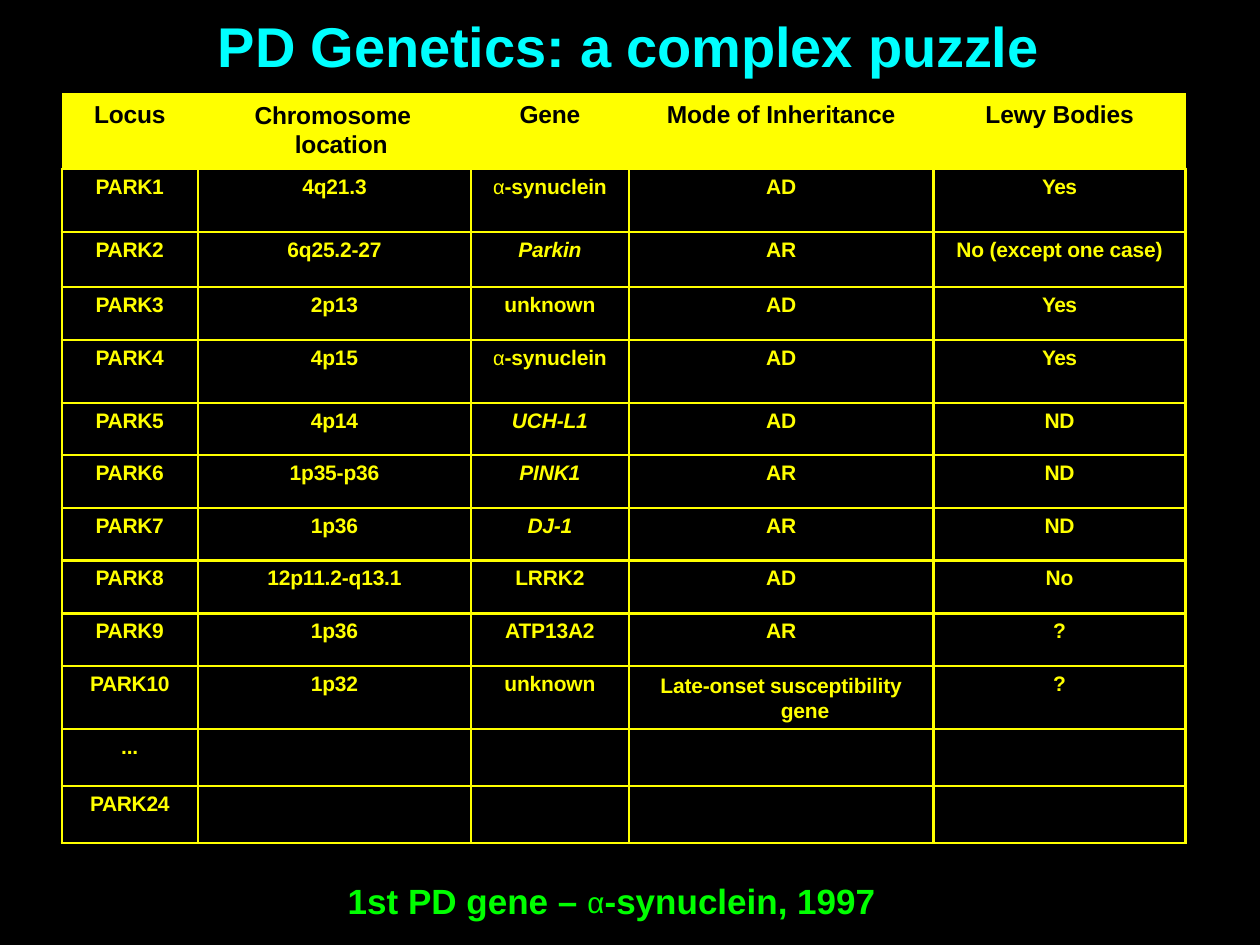
"""Build the slide on Parkinson's disease genetics with its locus table."""
from dataclasses import dataclass

from lxml.etree import SubElement
from pptx import Presentation
from pptx.dml.color import RGBColor
from pptx.enum.shapes import MSO_SHAPE as Shape
from pptx.enum.text import MSO_ANCHOR as Anchor, MSO_AUTO_SIZE as AutoSize, PP_ALIGN as Align
from pptx.oxml.ns import qn
from pptx.util import Inches, Pt

BLACK = RGBColor(0x00, 0x00, 0x00)
YELLOW = RGBColor(0xFF, 0xFF, 0x00)
CYAN = RGBColor(0x00, 0xFF, 0xFF)
GREEN = RGBColor(0x00, 0xFF, 0x00)
PLAIN_TABLE = "{2D5ABB26-0587-4C30-8999-92F81FD0307C}"


@dataclass(frozen=True)
class Style:
    size: float
    color: RGBColor
    italic: bool = False
    tracking: float = 0
    alpha_size: float = 11.5
    alpha_baseline: int = 0


@dataclass(frozen=True)
class Locus:
    name: str
    location: str = ""
    gene: str = ""
    inheritance: str = ""
    lewy_bodies: str = ""
    height: float = 0.42

    def texts(self) -> tuple:
        return self.name, self.location, self.gene, self.inheritance, self.lewy_bodies


HEADER = Locus("Locus", "Chromosome location", "Gene", "Mode of Inheritance", "Lewy Bodies", 0.6)
LOCI = [
    Locus("PARK1", "4q21.3", "α-synuclein", "AD", "Yes", 0.5),
    Locus("PARK2", "6q25.2-27", "Parkin", "AR", "No (except one case)", 0.44),
    Locus("PARK3", "2p13", "unknown", "AD", "Yes"),
    Locus("PARK4", "4p15", "α-synuclein", "AD", "Yes", 0.5),
    Locus("PARK5", "4p14", "UCH-L1", "AD", "ND", 0.41),
    Locus("PARK6", "1p35-p36", "PINK1", "AR", "ND"),
    Locus("PARK7", "1p36", "DJ-1", "AR", "ND"),
    Locus("PARK8", "12p11.2-q13.1", "LRRK2", "AD", "No"),
    Locus("PARK9", "1p36", "ATP13A2", "AR", "?"),
    Locus("PARK10", "1p32", "unknown", "Late-onset susceptibility\ngene", "?", 0.5),
    Locus("...", height=0.45),
    Locus("PARK24", height=0.45),
]
ITALIC_GENES = {"Parkin", "UCH-L1", "PINK1", "DJ-1"}
COLUMN_WIDTHS = (1.08, 2.17, 1.25, 2.42, 2)


def apply(target, **values) -> None:
    """Set each named attribute on the target."""
    for name, value in values.items():
        setattr(target, name, value)


def add_span(para, text: str, style: Style) -> None:
    """Add one run, with the Greek letter in a lighter cut."""
    span = para.add_run()
    span.text = text
    greek = text == "α"
    apply(span.font, name="Arial", size=Pt(style.alpha_size if greek else style.size),
          bold=not greek, italic=style.italic)
    span.font.color.rgb = style.color
    properties = span._r.get_or_add_rPr()
    if style.tracking and not greek:
        properties.set("spc", str(round(style.tracking * 100)))
    if style.alpha_baseline and greek:
        properties.set("baseline", str(style.alpha_baseline))


def write(para, text: str, style: Style, **layout) -> None:
    """Fill a paragraph, splitting the text around the Greek letter."""
    apply(para, **layout)
    for part in filter(None, text.partition("α")):
        add_span(para, part, style)


def set_indent(para, left: float, first: float = 0) -> None:
    """Set the left margin and first-line indent of a paragraph."""
    properties = para._p.get_or_add_pPr()
    properties.set("marL", str(Inches(left)))
    properties.set("indent", str(Inches(first)))


def write_line(shape, text: str, style: Style) -> None:
    """Write a single left-aligned line into a tight text frame."""
    frame = shape.text_frame
    apply(frame, margin_left=0, margin_right=0, margin_bottom=0, margin_top=Inches(0.01),
          word_wrap=True, vertical_anchor=Anchor.TOP, auto_size=AutoSize.SHAPE_TO_FIT_TEXT)
    para = frame.paragraphs[0]
    write(para, text, style, alignment=Align.LEFT, space_before=Pt(1))
    set_indent(para, 0.01)


def outline(cell) -> None:
    """Draw yellow borders on all four sides of a cell."""
    for side in ("lnL", "lnR", "lnT", "lnB"):
        line = SubElement(cell._tc.get_or_add_tcPr(), qn(f"a:{side}"), w=str(Pt(1.5)))
        SubElement(SubElement(line, qn("a:solidFill")), qn("a:srgbClr"), val=str(YELLOW))


def format_cell(cell, fill: RGBColor, top: float) -> None:
    """Fill a cell and set its margins."""
    apply(cell, margin_left=0, margin_right=0, margin_bottom=0, margin_top=Inches(top))
    cell.fill.solid()
    cell.fill.fore_color.rgb = fill


def fill_header(cell, text: str) -> None:
    """Write a column heading."""
    format_cell(cell, YELLOW, 0.06)
    para = cell.text_frame.paragraphs[0]
    style = Style(14, BLACK, tracking=-0.1)
    if text == HEADER.location:
        cell.margin_top = Inches(0.07)
        write(para, text, style, alignment=Align.LEFT, space_before=Pt(5.1), line_spacing=Pt(16.1))
        set_indent(para, 0.77, -0.32)
    else:
        write(para, text, style, alignment=Align.CENTER, space_before=Pt(4))


def fill_body(cell, text: str) -> None:
    """Write a value of a locus, one paragraph for each line."""
    outline(cell)
    format_cell(cell, BLACK, 0.05)
    if not text:
        return
    tracking = {"Yes": -0.3, "?": 0}.get(text, -0.2 if text.startswith("PARK") else -0.1)
    style = Style(12, YELLOW, text in ITALIC_GENES, tracking)
    first, *others = text.split("\n")
    layout = dict(alignment=Align.CENTER, line_spacing=Pt(14.3) if others else None)
    frame = cell.text_frame
    write(frame.paragraphs[0], first, style, space_before=Pt(3.5), **layout)
    for other in others:
        para = frame.add_paragraph()
        write(para, other, style, **layout)
        set_indent(para, 0.38)


def add_locus_table(page) -> None:
    """Add the table of loci."""
    rows = [HEADER, *LOCI]
    table = page.shapes.add_table(
        len(rows), len(COLUMN_WIDTHS), Inches(0.49), Inches(0.74),
        Inches(sum(COLUMN_WIDTHS)), Inches(sum(row.height for row in rows))).table
    apply(table, first_row=False, horz_banding=False)
    for style_id in table._tbl.iter(qn("a:tableStyleId")):
        style_id.text = PLAIN_TABLE
    for column, width in zip(table.columns, COLUMN_WIDTHS):
        column.width = Inches(width)
    for row, locus in zip(table.rows, rows):
        row.height = Inches(locus.height)
        fill_cell = fill_header if locus is HEADER else fill_body
        for cell, text in zip(row.cells, locus.texts()):
            fill_cell(cell, text)


def main() -> None:
    """Assemble and save the deck."""
    deck = Presentation()
    apply(deck, slide_width=Inches(10), slide_height=Inches(7.5))
    page = deck.slides.add_slide(deck.slide_layouts[5])
    title = page.shapes.title
    backdrop = page.shapes.add_shape(Shape.RECTANGLE, 0, 0, deck.slide_width, deck.slide_height)
    backdrop.shadow.inherit = False
    backdrop.fill.solid()
    backdrop.fill.fore_color.rgb = BLACK
    backdrop.line.fill.background()
    title.element.addprevious(backdrop.element)
    apply(title, left=Inches(1.72), top=Inches(0.08), width=Inches(6.56), height=Inches(0.56))
    write_line(title, "PD Genetics: a complex puzzle", Style(32, CYAN, tracking=-0.1))
    add_locus_table(page)
    caption = page.shapes.add_textbox(Inches(2.75), Inches(6.84), Inches(4.25), Inches(0.36))
    write_line(caption, "1st PD gene – α-synuclein, 1997",
               Style(20, GREEN, alpha_size=29.2, alpha_baseline=1000))
    deck.save("out.pptx")


if __name__ == "__main__":
    main()
